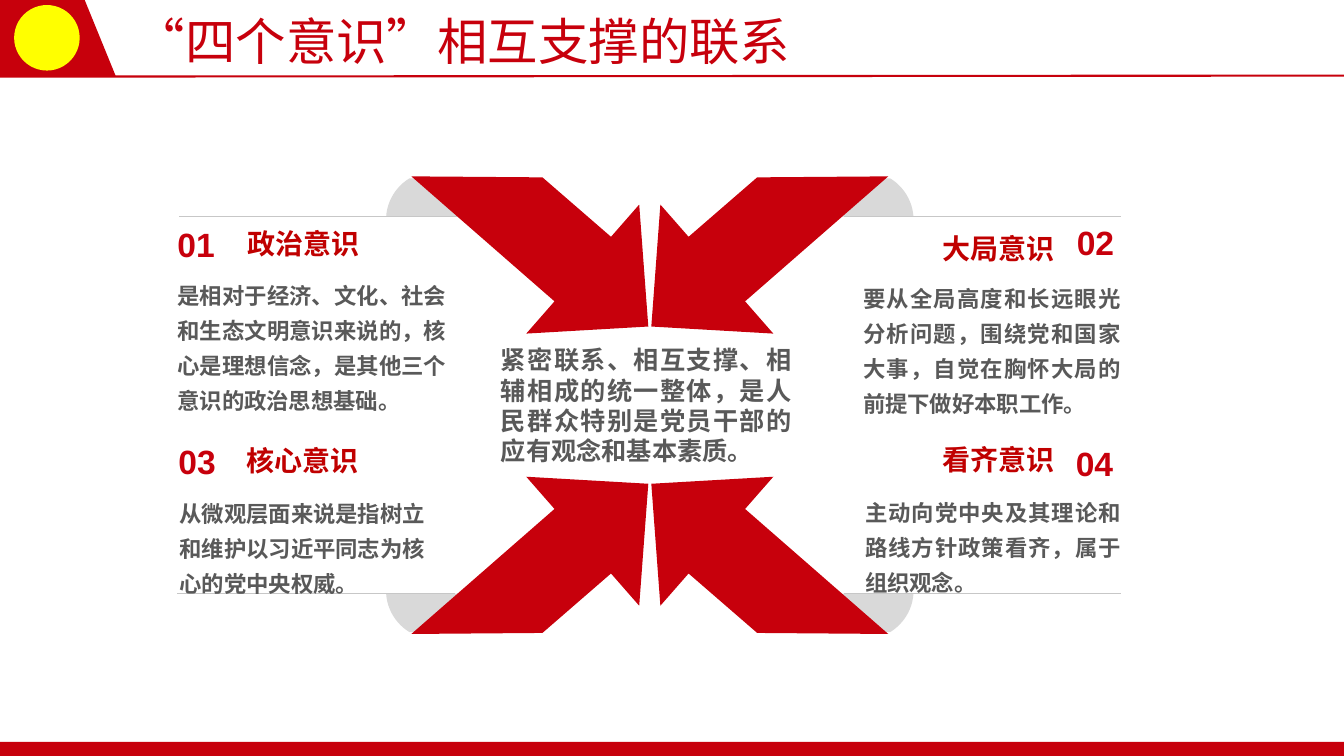
"""Build the slide on how the four kinds of awareness support each other."""
from dataclasses import dataclass

from lxml import etree
from pptx import Presentation
from pptx import util as u
from pptx.dml import color
from pptx.enum import lang, shapes, text
from pptx.oxml import ns

COLORS = {"red": "C7000C", "heading": "C00000", "yellow": "FFFF00", "tab": "D9D9D9",
          "rule": "C7C7C7", "body": "595959"}
CENTER_X, CENTER_Y = 6.445, 4.02
TAB_CENTER_X = 4.335
JUSTIFY, LEFT = text.PP_ALIGN.JUSTIFY, text.PP_ALIGN.LEFT
TIGHT = (0, 0)
PADDED = (0.1, 0.05)

Point = tuple[float, float]
Box = tuple[float, float, float, float]

ARROW: list[Point] = [(5.38, 1.76), (4.08, 1.75), (5.5, 2.99), (5.22, 3.31),
                      (6.43, 3.24), (6.34, 2.03), (6.06, 2.35)]
TAB_CURVE: list[Point] = [(4.06, 1.77), (3.93, 1.85), (3.84, 1.99), (3.83, 2.15)]
BANNER: list[Point] = [(0, 0), (0, 0.76), (1.15, 0.76), (0.84, 0)]
RULES = [(8.37, 2.15), (1.78, 2.15), (8.37, 5.89), (1.76, 5.89)]
RULE_LENGTH = 2.75


@dataclass(frozen=True)
class Label:
    """Describe one text box."""
    words: str
    box: Box
    size: float
    color: str = "body"
    bold: bool = True
    font: str = "Arial"
    margins: tuple[float, float] = TIGHT
    align: text.PP_ALIGN = JUSTIFY
    spacing: float = 1.0
    anchor: text.MSO_ANCHOR = text.MSO_ANCHOR.TOP
    wrap: bool = True


@dataclass(frozen=True)
class Awareness:
    """Describe one quadrant: number, heading and explanation."""
    number: str
    number_at: Point
    heading: str
    heading_at: Point
    explanation: str
    explanation_box: Box
    align: text.PP_ALIGN = JUSTIFY

    def labels(self) -> list[Label]:
        """Return the text boxes of the quadrant."""
        return [
            Label(self.number, (*self.number_at, 0.48, 0.48), 24, "red", align=LEFT),
            Label(self.heading, (*self.heading_at, 1.32, 0.44), 20, "heading",
                  margins=PADDED, wrap=False),
            Label(self.explanation, self.explanation_box, 16, spacing=1.3, align=self.align),
        ]


QUADRANTS = [
    Awareness("01", (1.76, 2.22), "政治意识", (2.36, 2.2),
              "是相对于经济、文化、社会和生态文明意识来说的，核心是理想信念，是其他三个意识的政治思想基础。",
              (1.76, 2.72, 2.67, 1.32)),
    Awareness("02", (10.68, 2.2), "大局意识", (9.25, 2.25),
              "要从全局高度和长远眼光分析问题，围绕党和国家大事，自觉在胸怀大局的前提下做好本职工作。",
              (8.56, 2.75, 2.56, 1.39)),
    Awareness("03", (1.77, 4.37), "核心意识", (2.35, 4.35),
              "从微观层面来说是指树立和维护以习近平同志为核心的党中央权威。",
              (1.78, 4.88, 2.64, 1.01), LEFT),
    Awareness("04", (10.67, 4.39), "看齐意识", (9.25, 4.34),
              "主动向党中央及其理论和路线方针政策看齐，属于组织观念。",
              (8.58, 4.87, 2.54, 1.01)),
]
SUMMARY = Label("紧密联系、相互支撑、相辅相成的统一整体，是人民群众特别是党员干部的应有观念和基本素质。",
                (4.87, 3.28, 3.08, 1.48), 18, margins=PADDED, anchor=text.MSO_ANCHOR.MIDDLE)
TITLE = Label("“四个意识”相互支撑的联系", (1.24, 0.04, 7.94, 0.71), 36, "red", False,
              "Noto Sans CJK SC", PADDED, LEFT, anchor=text.MSO_ANCHOR.MIDDLE)


def apply(target, values: dict) -> None:
    """Set every attribute in values on target."""
    for name, value in values.items():
        setattr(target, name, value)


def rgb(name: str) -> color.RGBColor:
    """Return a named colour."""
    return color.RGBColor.from_string(COLORS[name])


def paint(shape, fill: str) -> None:
    """Give a shape a plain fill without line or shadow."""
    shape.shadow.inherit = False
    shape.fill.solid()
    shape.fill.fore_color.rgb = rgb(fill)
    shape.line.fill.background()


def add_preset(slide, kind: shapes.MSO_SHAPE, box: Box, fill: str) -> None:
    """Draw a filled preset shape."""
    paint(slide.shapes.add_shape(kind, *map(u.Inches, box)), fill)


def add_outline(slide, points: list[Point], fill: str) -> None:
    """Draw a filled polygon."""
    start, *rest = [(u.Inches(x), u.Inches(y)) for x, y in points]
    builder = slide.shapes.build_freeform(*start, scale=1.0)
    builder.add_line_segments(rest, close=True)
    paint(builder.convert_to_shape(), fill)


def add_rule(slide, start: Point, end: Point, line_color: str, width: float) -> None:
    """Draw a straight line."""
    rule = slide.shapes.add_connector(shapes.MSO_CONNECTOR.STRAIGHT,
                                      *map(u.Inches, (*start, *end)))
    rule.line.color.rgb = rgb(line_color)
    rule.line.width = u.Pt(width)
    etree.SubElement(rule._element.spPr, ns.qn("a:effectLst"))


def add_label(slide, label: Label) -> None:
    """Draw a text box."""
    frame = slide.shapes.add_textbox(*map(u.Inches, label.box)).text_frame
    side, edge = map(u.Inches, label.margins)
    apply(frame, {"margin_left": side, "margin_right": side, "margin_top": edge,
                  "margin_bottom": edge, "word_wrap": label.wrap,
                  "vertical_anchor": label.anchor})
    paragraph = frame.paragraphs[0]
    apply(paragraph, {"alignment": label.align, "line_spacing": label.spacing})
    run = paragraph.add_run()
    run.text = label.words
    apply(run.font, {"size": u.Pt(label.size), "bold": label.bold, "name": label.font,
                     "language_id": lang.MSO_LANGUAGE_ID.SIMPLIFIED_CHINESE})
    run.font.color.rgb = rgb(label.color)
    etree.SubElement(run._r.rPr, ns.qn("a:ea"), typeface=label.font)


def mirrored(points: list[Point]) -> list[list[Point]]:
    """Return the points in all four quadrants around the centre."""
    return [[(CENTER_X + sx * (x - CENTER_X), CENTER_Y + sy * (y - CENTER_Y))
             for x, y in points] for sx in (1, -1) for sy in (1, -1)]


def curve(controls: list[Point], steps: int = 12) -> list[Point]:
    """Return points along a cubic Bezier curve."""
    points = []
    for step in range(steps + 1):
        t = step / steps
        weights = ((1 - t) ** 3, 3 * t * (1 - t) ** 2, 3 * t ** 2 * (1 - t), t ** 3)
        points.append(tuple(sum(w * c[axis] for w, c in zip(weights, controls))
                            for axis in (0, 1)))
    return points


def main() -> None:
    """Build and save the presentation."""
    presentation = Presentation()
    apply(presentation, {"slide_width": u.Inches(13.33), "slide_height": u.Inches(7.5)})
    slide = presentation.slides.add_slide(presentation.slide_layouts[6])

    add_rule(slide, (0, 0.76), (13.33, 0.75), "red", 1.5)
    add_outline(slide, BANNER, "red")
    add_preset(slide, shapes.MSO_SHAPE.OVAL, (0.14, 0.05, 0.65, 0.65), "yellow")
    add_preset(slide, shapes.MSO_SHAPE.RECTANGLE, (0, 7.36, 13.33, 0.14), "red")

    left_side = curve(TAB_CURVE)
    right_side = [(2 * TAB_CENTER_X - x, y) for x, y in reversed(left_side)]
    for tab in mirrored(left_side + right_side):
        add_outline(slide, tab, "tab")
    for x, y in RULES:
        add_rule(slide, (x, y), (x + RULE_LENGTH, y), "rule", 0.5)
    for arrow in mirrored(ARROW):
        add_outline(slide, arrow, "red")

    for quadrant in QUADRANTS:
        for label in quadrant.labels():
            add_label(slide, label)
    for label in (SUMMARY, TITLE):
        add_label(slide, label)
    presentation.save("out.pptx")


if __name__ == "__main__":
    main()
